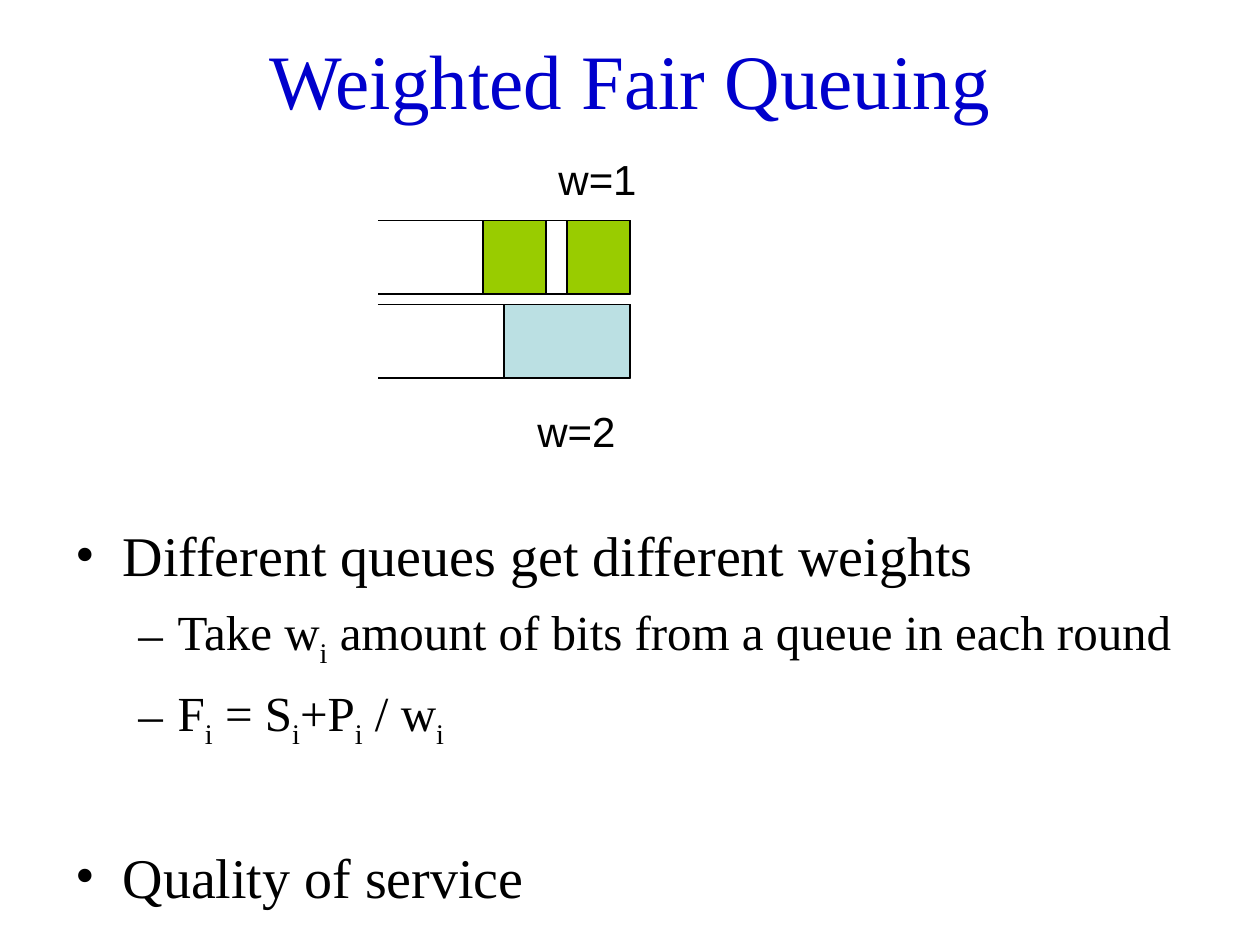
from pptx import Presentation
from pptx.dml.color import RGBColor
from pptx.enum.shapes import MSO_SHAPE
from pptx.enum.text import MSO_ANCHOR, PP_ALIGN
from pptx.util import Pt
from lxml.etree import SubElement
from pptx.oxml.ns import qn

SERIF, SANS = "Times New Roman", "Arial"
BLACK = "000000"


def tint(code):
    return RGBColor.from_string(code)


def add_run(para, text, size, font, color=BLACK, sub=False):
    run = para.add_run()
    run.text = text
    run.font.size = Pt(size)
    run.font.name = font
    run.font.color.rgb = tint(color)
    if sub:
        run.font._element.set("baseline", "-25000")


def add_text(slide, box, wrap=True):
    frame = slide.shapes.add_textbox(*map(Pt, box)).text_frame
    frame.word_wrap = wrap
    return frame


def add_title(slide, box, text):
    frame = add_text(slide, box)
    frame.vertical_anchor = MSO_ANCHOR.MIDDLE
    para = frame.paragraphs[0]
    para.alignment = PP_ALIGN.CENTER
    add_run(para, text, 44, SERIF, "0000CC")


def add_label(slide, box, text):
    frame = add_text(slide, box, False)
    add_run(frame.paragraphs[0], text, 24, SANS)


def set_line(shape):
    shape.shadow.inherit = False
    shape.line.color.rgb = tint(BLACK)
    shape.line.width = Pt(0.75)


def add_queue(slide, box, color, packs):
    left, top, width, height = box
    for start, size in packs:
        pack = slide.shapes.add_shape(
            MSO_SHAPE.RECTANGLE, Pt(left + start), Pt(top), Pt(size), Pt(height))
        pack.fill.solid()
        pack.fill.fore_color.rgb = tint(color)
        set_line(pack)
    right, base = left + width, top + height
    pen = slide.shapes.build_freeform(Pt(left), Pt(top))
    pen.add_line_segments(
        [(Pt(right), Pt(top)), (Pt(right), Pt(base)), (Pt(left), Pt(base))], close=False)
    rail = pen.convert_to_shape()
    rail.fill.background()
    set_line(rail)


def add_body(slide, box, items):
    frame = add_text(slide, box)
    styles = [("•", 32, 27, 27), ("–", 28, 58.5, 22.5)]
    for index, (level, gap, parts) in enumerate(items):
        mark, size, margin, hang = styles[level]
        para = frame.add_paragraph() if index else frame.paragraphs[0]
        para.level = level
        para.space_before = Pt(gap)
        props = para._p.get_or_add_pPr()
        props.set("marL", str(Pt(margin)))
        props.set("indent", str(-Pt(hang)))
        SubElement(props, qn("a:buFont"), typeface=SERIF)
        SubElement(props, qn("a:buChar"), char=mark)
        for place, text in enumerate(parts):
            add_run(para, text, size, SERIF, sub=place % 2 == 1)


def main():
    deck = Presentation()
    deck.slide_width, deck.slide_height = Pt(720), Pt(540)
    slide = deck.slides.add_slide(deck.slide_layouts[6])
    add_title(slide, (36, 0, 648, 90), "Weighted Fair Queuing")
    add_body(slide, (36, 294, 648, 188.5), [
        (0, 6.4, ["Different queues get different weights"]),
        (1, 8, ["Take w", "i", " amount of bits from a queue in each round"]),
        (1, 8, ["F", "i", " = S", "i", "+P", "i", " / w", "i"]),
        (0, 53, ["Quality of service"]),
    ])
    add_queue(slide, (216, 126, 144, 42), "99CC00", [(60, 36), (108, 36)])
    add_queue(slide, (216, 174, 144, 42), "BBE0E3", [(72, 72)])
    add_label(slide, (300, 228, 60, 36), "w=2")
    add_label(slide, (312, 84, 60, 36), "w=1")
    deck.save("out.pptx")


if __name__ == "__main__":
    main()
